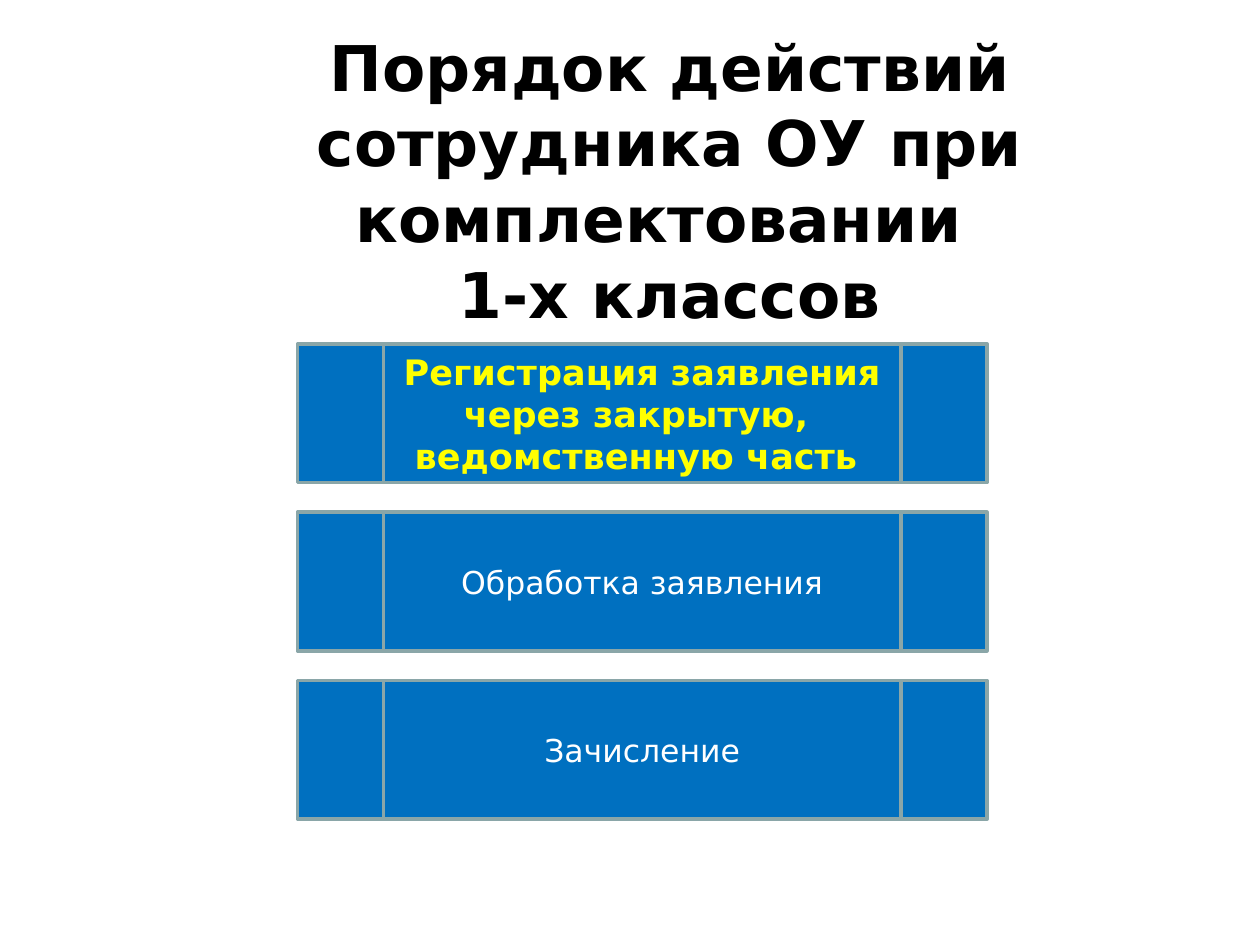
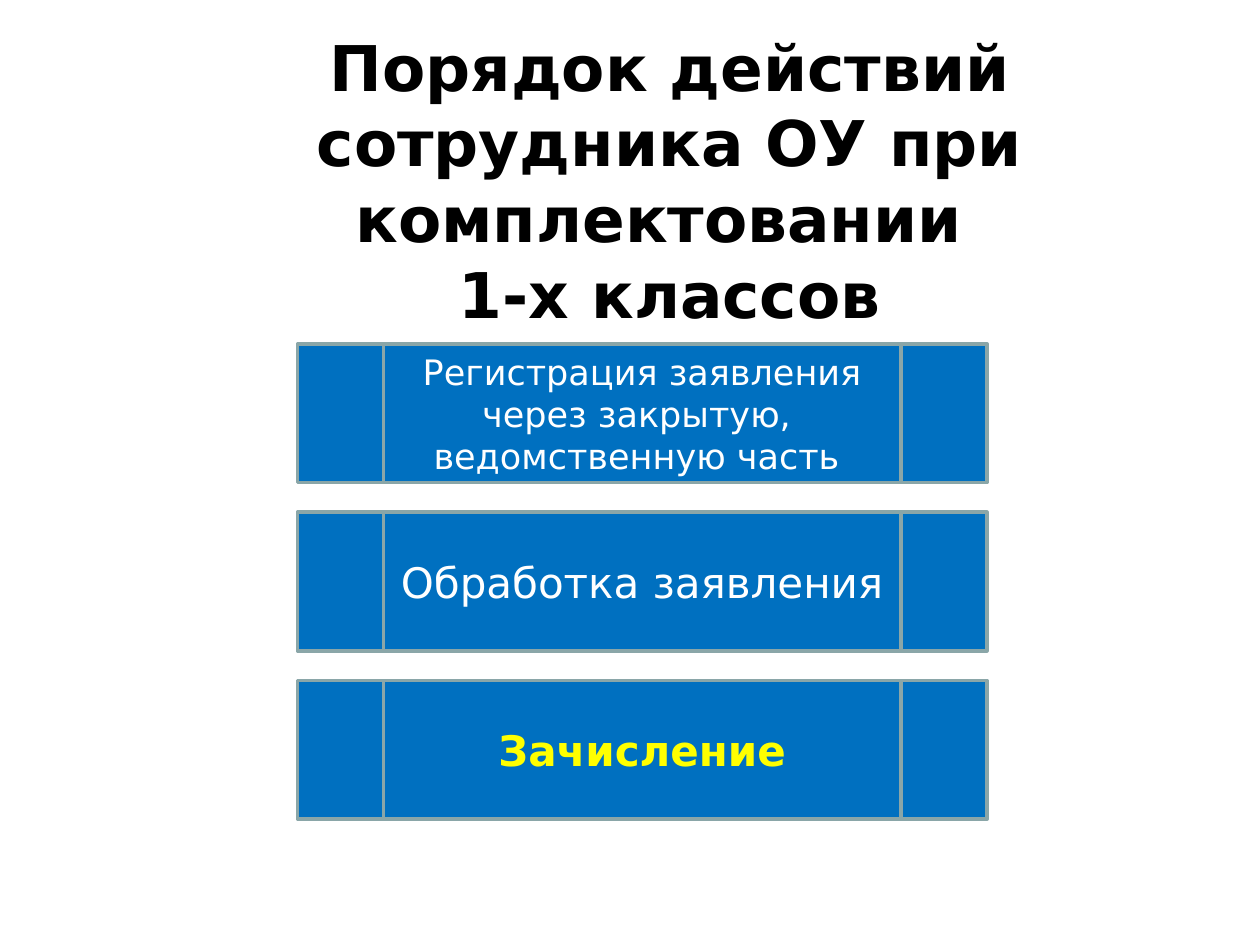
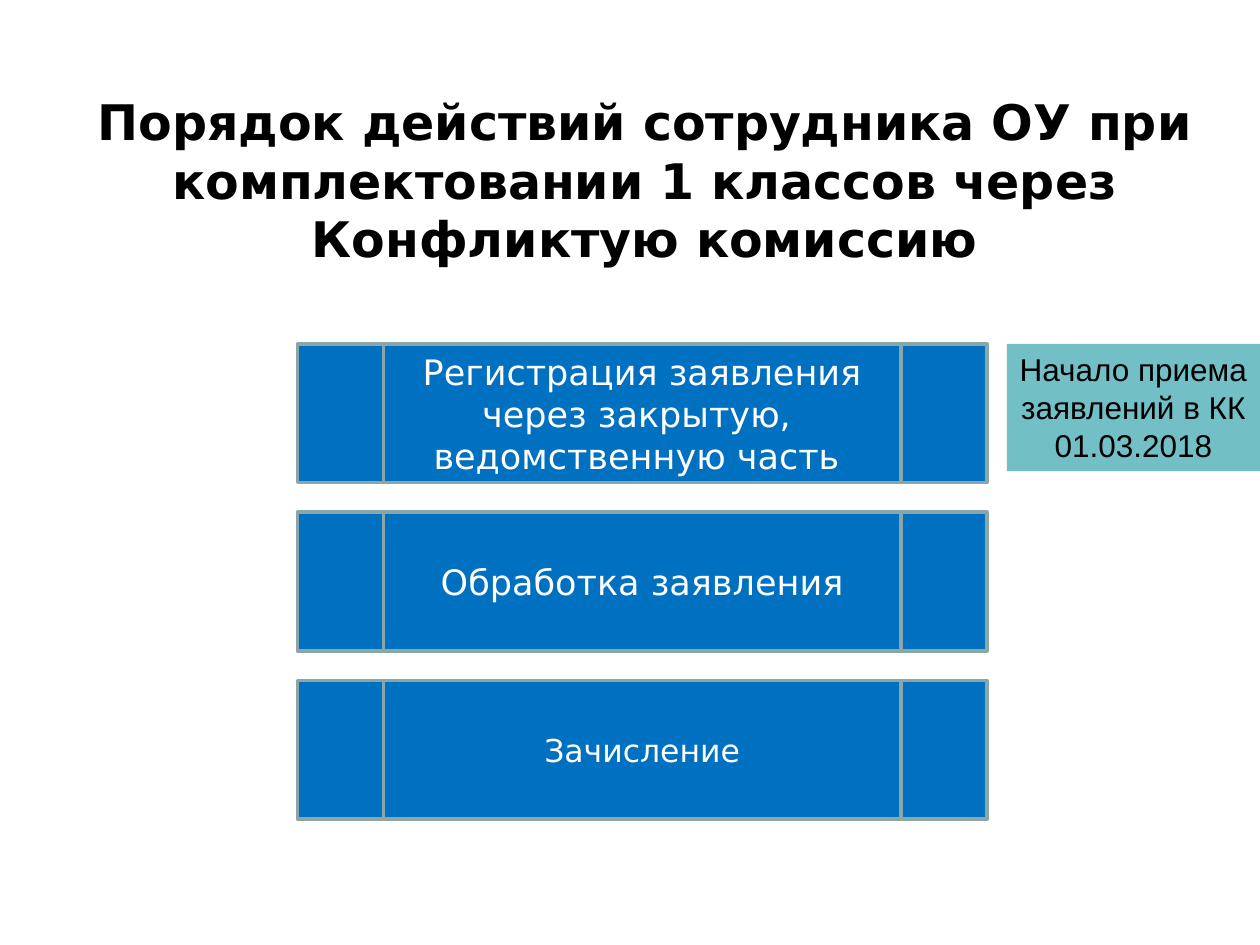
from pptx import Presentation
from pptx.dml.color import RGBColor
from pptx.enum.shapes import MSO_SHAPE
from pptx.enum.text import MSO_ANCHOR, PP_ALIGN
from pptx.util import Pt

PROCESS, RECT = MSO_SHAPE.FLOWCHART_PREDEFINED_PROCESS, MSO_SHAPE.RECTANGLE
TOP, MIDDLE, CENTER = MSO_ANCHOR.TOP, MSO_ANCHOR.MIDDLE, PP_ALIGN.CENTER


class Theme:
    step_fill, step_line = "0070C0", "8AA6A8"
    note_fill = "72BFC5"
    ink, light, accent = "000000", "FFFFFF", "FFFF00"
    font, note_font = "DejaVu Sans", "Arial"
    title_size, long_title_size = 36, 28
    small, medium, large = 18, 20, 24
    line_width = 2


# Content
TITLE = "Порядок действий сотрудника ОУ при комплектовании \v1-х классов"
COMMISSION_TITLE = ("Порядок действий сотрудника ОУ при комплектовании 1 классов "
                    "через Конфликтую комиссию")
STEPS = [
    "Регистрация заявления через закрытую, \vведомственную часть ",
    "Обработка заявления",
    "Зачисление",
]
SLIDES = [
    dict(title=TITLE, title_size=Theme.title_size, title_left=54,
         step_sizes=[Theme.medium, Theme.small, Theme.small], active=0),
    dict(title=TITLE, title_size=Theme.title_size, title_left=54,
         step_sizes=[Theme.medium, Theme.large, Theme.large], active=2),
    dict(title=COMMISSION_TITLE, title_size=Theme.long_title_size, title_left=25.2,
         step_sizes=[Theme.medium, Theme.medium, Theme.small], active=None,
         note="Начало приема заявлений в КК 01.03.2018"),
]

# Layout, in points
SLIDE_W, SLIDE_H = 720, 540
TITLE_TOP, TITLE_RIGHT, TITLE_H = 54.7, 711.4, 95.8
STEP_LEFT, STEP_TOP, STEP_W, STEP_H = 170, 196.5, 394, 79.2
STEP_PITCH = 96.2
NOTE_LEFT, NOTE_H = 575.3, 72.7


def write(sp, text, size, color, font=Theme.font, bold=False, anchor=MIDDLE):
    tf = sp.text_frame
    tf.word_wrap = True
    tf.vertical_anchor = anchor
    p = tf.paragraphs[0]
    p.text = text
    p.alignment = CENTER
    for r in p.runs:
        r.font.name = font
        r.font.size = Pt(size)
        r.font.bold = bold
        r.font.color.rgb = RGBColor.from_string(color)


def add_box(s, kind, left, top, width, height, fill, line=None):
    sp = s.shapes.add_shape(kind, Pt(left), Pt(top), Pt(width), Pt(height))
    sp.shadow.inherit = False
    sp.fill.solid()
    sp.fill.fore_color.rgb = RGBColor.from_string(fill)
    if line:
        sp.line.color.rgb = RGBColor.from_string(line)
        sp.line.width = Pt(Theme.line_width)
    else:
        sp.line.fill.background()
    return sp


def add_title(s, text, size, left):
    sp = s.shapes.add_textbox(Pt(left), Pt(TITLE_TOP),
                              Pt(TITLE_RIGHT - left), Pt(TITLE_H))
    write(sp, text, size, Theme.ink, bold=True)


def add_steps(s, sizes, active):
    for i, (text, size) in enumerate(zip(STEPS, sizes)):
        sp = add_box(s, PROCESS, STEP_LEFT, STEP_TOP + i * STEP_PITCH,
                     STEP_W, STEP_H, Theme.step_fill, Theme.step_line)
        color = Theme.accent if i == active else Theme.light
        write(sp, text, size, color, bold=i == active)


def add_note(s, text):
    sp = add_box(s, RECT, NOTE_LEFT, STEP_TOP, SLIDE_W - NOTE_LEFT, NOTE_H,
                 Theme.note_fill)
    write(sp, text, Theme.small, Theme.ink, Theme.note_font, anchor=TOP)


def main():
    prs = Presentation()
    prs.slide_width, prs.slide_height = Pt(SLIDE_W), Pt(SLIDE_H)
    blank = prs.slide_layouts[6]
    for item in SLIDES:
        s = prs.slides.add_slide(blank)
        add_title(s, item["title"], item["title_size"], item["title_left"])
        add_steps(s, item["step_sizes"], item["active"])
        if "note" in item:
            add_note(s, item["note"])
    prs.save("out.pptx")


if __name__ == "__main__":
    main()
